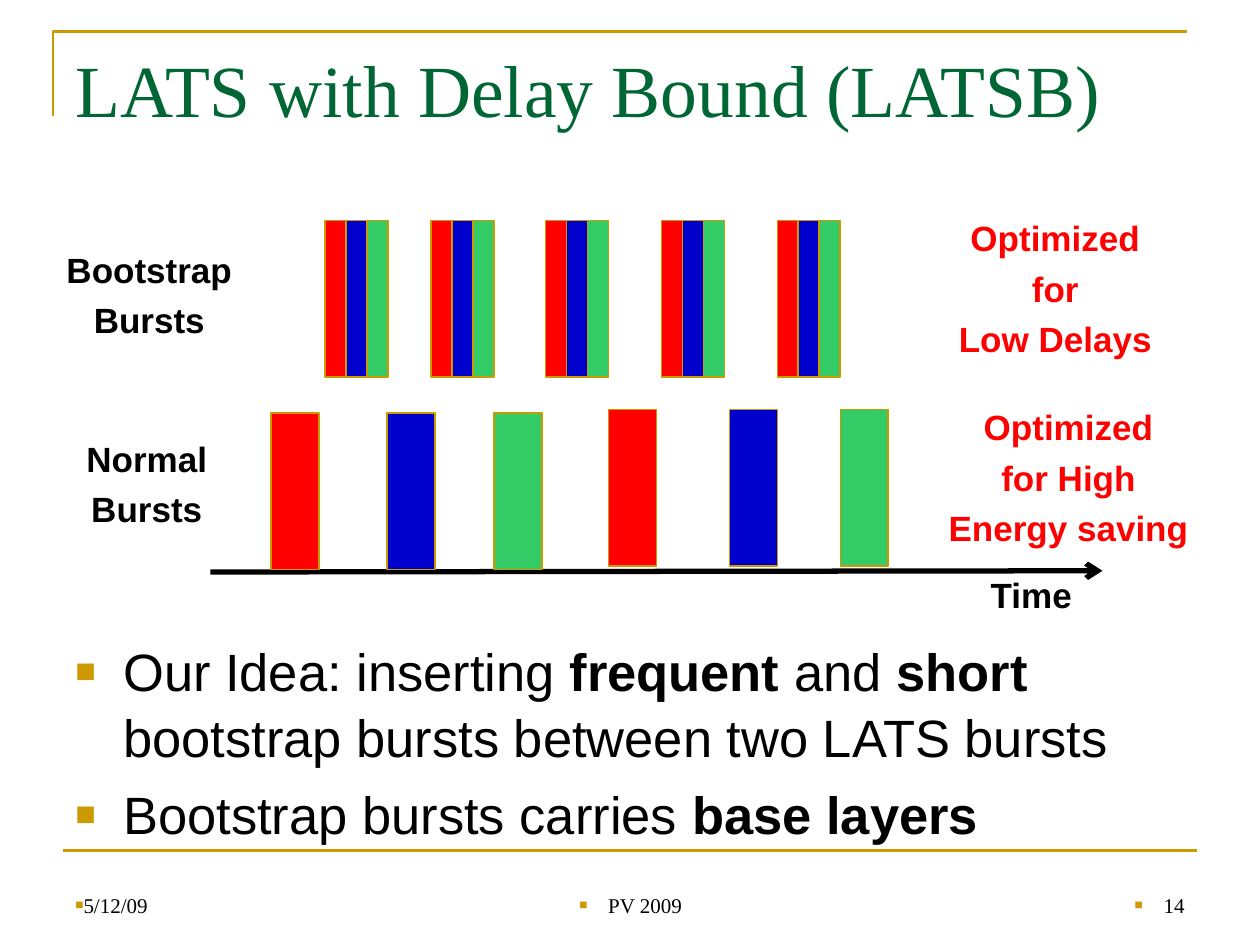
import dataclasses

import lxml.etree
import pptx
import pptx.dml.color
import pptx.enum.shapes
import pptx.enum.text
import pptx.oxml.ns
import pptx.util

Inches = pptx.util.Inches
Pt = pptx.util.Pt
Align = pptx.enum.text.PP_ALIGN
Anchor = pptx.enum.text.MSO_ANCHOR


@dataclasses.dataclass(frozen=True)
class Theme:
    """Colours, fonts and type sizes of the deck."""
    gold: str = "CC9900"
    title: str = "006633"
    ink: str = "000000"
    red: str = "FF0000"
    blue: str = "0000CC"
    green: str = "33CC66"
    serif: str = "Times New Roman"
    sans: str = "Arial"
    title_size: int = 42
    body_size: int = 30
    label_size: int = 20
    footer_size: int = 12


THEME = Theme()
LAYERS = (THEME.red, THEME.blue, THEME.green)


def colour(code):
    """Turn a hex code into a colour."""
    return pptx.dml.color.RGBColor.from_string(code)


def add_element(parent, tag, **attributes):
    """Append a drawing element to its parent."""
    element = lxml.etree.SubElement(parent, pptx.oxml.ns.qn(tag))
    for name, value in attributes.items():
        element.set(name, str(value))
    return element


def add_bullet(para, margin, indent):
    """Give a paragraph a small gold square with a hanging indent."""
    properties = para._p.get_or_add_pPr()
    properties.set("marL", str(Inches(margin)))
    properties.set("indent", str(Inches(indent)))
    add_element(add_element(properties, "a:buClr"), "a:srgbClr", val=THEME.gold)
    add_element(properties, "a:buSzPct", val=65000)
    add_element(properties, "a:buFont", typeface=THEME.sans)
    add_element(properties, "a:buChar", char="■")


def add_text(page, box, lines, size, font, code, bold=False, align=Align.LEFT,
             anchor=Anchor.TOP, wrap=True, before=0, spacing=None, bullet=None):
    """Write lines of text; a line is a list of (words, bold) or a string."""
    frame = page.shapes.add_textbox(*map(Inches, box)).text_frame
    frame.word_wrap = wrap
    frame.vertical_anchor = anchor
    for index, line in enumerate(lines):
        para = frame.add_paragraph() if index else frame.paragraphs[0]
        para.alignment = align
        para.space_before = Pt(before)
        if spacing:
            para.line_spacing = spacing
        if bullet:
            add_bullet(para, *bullet)
        for words, strong in [(line, bold)] if isinstance(line, str) else line:
            span = para.add_run()
            span.text = words
            span.font.name = font
            span.font.size = Pt(size)
            span.font.bold = strong
            span.font.color.rgb = colour(code)


def add_line(page, start, end, code, width, arrow=False):
    """Draw a straight line, with an arrowhead if asked."""
    line = page.shapes.add_connector(
        pptx.enum.shapes.MSO_CONNECTOR.STRAIGHT, *map(Inches, start + end))
    line.line.color.rgb = colour(code)
    line.line.width = Pt(width)
    if arrow:
        add_element(line.line._get_or_add_ln(), "a:tailEnd", type="arrow")
    add_element(line._element.spPr, "a:effectLst")


def add_burst(page, box, code):
    """Draw one burst as a filled bar."""
    bar = page.shapes.add_shape(
        pptx.enum.shapes.MSO_SHAPE.RECTANGLE, *map(Inches, box))
    bar.shadow.inherit = False
    bar.fill.solid()
    bar.fill.fore_color.rgb = colour(code)
    bar.line.color.rgb = colour(THEME.gold)
    bar.line.width = Pt(1)


def add_label(page, box, lines, code=THEME.ink):
    """Write a bold centred label of the diagram."""
    add_text(page, box, lines, THEME.label_size, THEME.sans, code, bold=True,
             align=Align.CENTER, wrap=False, before=4.8)


def add_frame(page, box):
    """Draw the corner rule above and the straight rule below."""
    left, top, width, height = box
    builder = page.shapes.build_freeform(Inches(left), Inches(top + 0.67))
    builder.add_line_segments(
        [(Inches(left), Inches(top)), (Inches(left + width), Inches(top))], close=False)
    corner = builder.convert_to_shape()
    corner.shadow.inherit = False
    corner.fill.background()
    corner.line.color.rgb = colour(THEME.gold)
    corner.line.width = Pt(1.5)
    bottom = top + height
    add_line(page, (left + 0.08, bottom), (left + width + 0.08, bottom), THEME.gold, 1.5)


def add_bootstrap_row(page, box):
    """Draw the bootstrap bursts, each with all three layers, and their labels."""
    left, top = box[:2]
    strip = 1 / 6
    for offset in (2.16, 3, 3.91, 4.83, 5.75):
        for index, code in enumerate(LAYERS):
            add_burst(page, (left + offset + index * strip, top, strip, 1.24), code)
    add_label(page, (left, top + 0.17, 1.53, 0.84), ["Bootstrap", "Bursts"])
    add_label(page, (left + 7.08, top - 0.08, 1.75, 1.25),
              ["Optimized", "for", "Low Delays"], THEME.red)


def add_normal_row(page, box):
    """Draw the normal bursts on the time axis and their labels."""
    left, top = box[:2]
    add_line(page, (left + 1.25, top + 1.29), (left + 8.33, top + 1.28), THEME.ink, 3, True)
    offsets = (1.73, 2.65, 3.5, 4.41, 5.37, 6.25)
    for index, offset in enumerate(offsets):
        rise = 0.03 if index < len(LAYERS) else 0
        add_burst(page, (left + offset, top + rise, 0.38, 1.24), LAYERS[index % len(LAYERS)])
    add_label(page, (left + 7.34, top + 1.25, 0.85, 0.44), ["Time"])
    add_label(page, (left + 0.16, top + 0.17, 1.17, 0.84), ["Normal", "Bursts"])
    add_label(page, (left + 7, top - 0.08, 2.12, 1.25),
              ["Optimized", "for High", "Energy saving"], THEME.red)


def add_body(page, box):
    """Write the bulleted idea."""
    lines = [
        [("Our Idea: inserting ", False), ("frequent ", True), ("and ", False),
         ("short ", True), ("bootstrap bursts between two LATS bursts", False)],
        [("Bootstrap bursts carries ", False), ("base layers", True)],
    ]
    add_text(page, box, lines, THEME.body_size, THEME.sans, THEME.ink,
             before=6, spacing=1.05, bullet=(0.38, -0.38))


def add_footer(page, box):
    """Write the date, the venue and the page number."""
    left, top, width, height = box
    parts = (
        (0, 2.33, "5/12/09", Align.LEFT, (0, 0)),
        (2.92, 3.17, "PV 2009", Align.CENTER, (0.23, -0.23)),
        (width - 2.33, 2.33, "14", Align.RIGHT, (0.23, -0.23)),
    )
    for offset, part_width, words, align, bullet in parts:
        add_text(page, (left + offset, top, part_width, height), [words],
                 THEME.footer_size, THEME.serif, THEME.ink, align=align,
                 anchor=Anchor.BOTTOM, bullet=bullet)


def main():
    """Build the deck and save it."""
    deck = pptx.Presentation()
    deck.slide_width, deck.slide_height = Inches(10), Inches(7.5)
    page = deck.slides.add_slide(deck.slide_layouts[6])
    add_frame(page, (0.42, 0.25, 9, 6.5))
    add_text(page, (0.5, 0.3, 9, 1.25), ["LATS with Delay Bound (LATSB)"],
             THEME.title_size, THEME.serif, THEME.title)
    add_bootstrap_row(page, (0.42, 1.75, 9, 1.24))
    add_normal_row(page, (0.42, 3.25, 9, 1.24))
    add_body(page, (0.5, 5, 9, 1.7))
    add_footer(page, (0.5, 6.83, 9, 0.5))
    deck.save("out.pptx")


if __name__ == "__main__":
    main()
